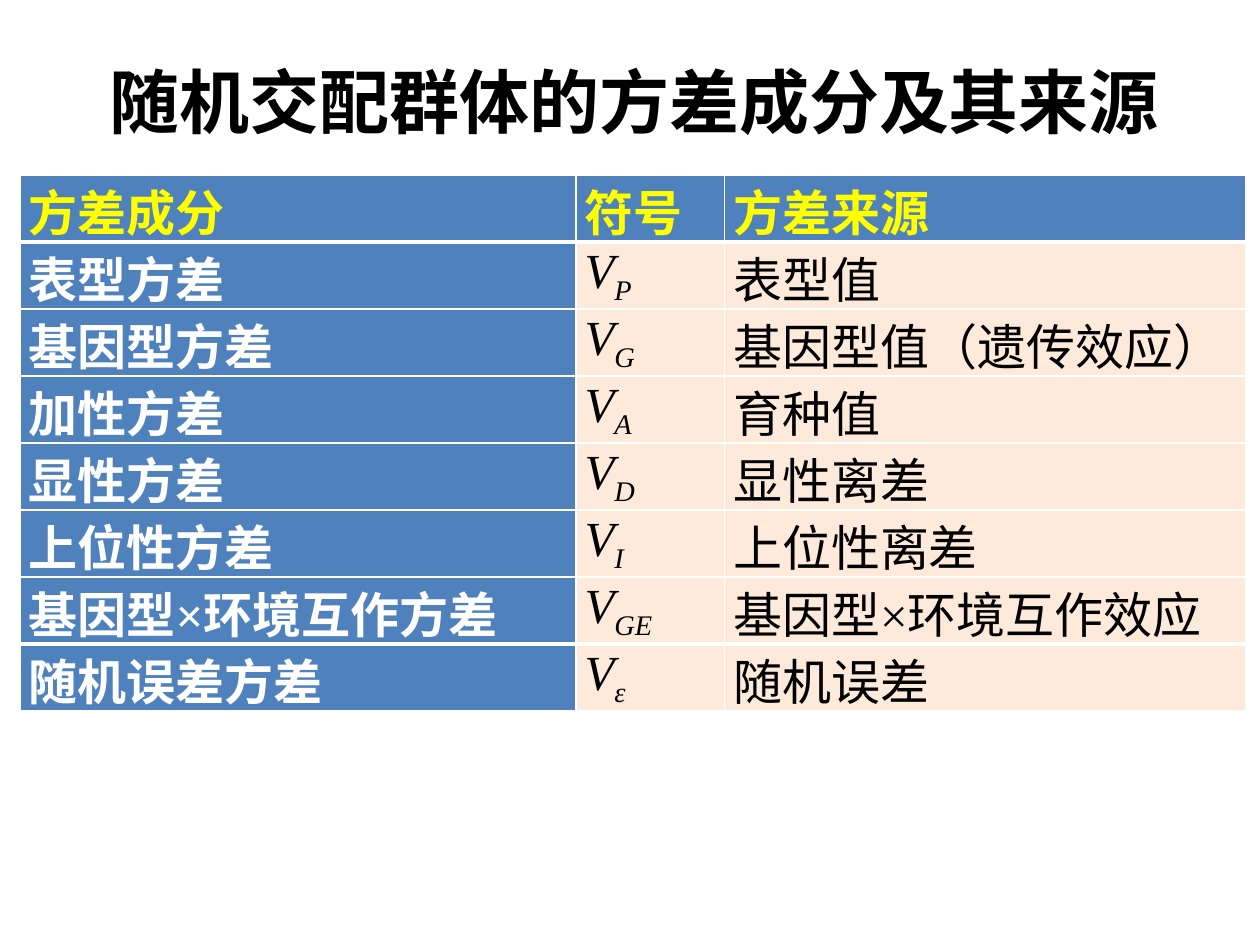
from dataclasses import dataclass

from lxml import etree
from pptx import Presentation
from pptx import util as u
from pptx.dml.color import RGBColor
from pptx.enum import text as t
from pptx.oxml import ns


@dataclass(frozen=True)
class Theme:
    font: str = "Times New Roman"
    title_size: int = 40
    table_size: int = 28
    black: str = "000000"
    white: str = "FFFFFF"
    yellow: str = "FFFF00"
    blue: str = "4F81BD"
    peach: str = "FDEADA"
    thin: int = 1
    thick: int = 3


THEME = Theme()

HEADER = ("方差成分", "符号", "方差来源")
# Component, subscript of its symbol V, source
COMPONENTS = [
    ("表型方差", "P", "表型值"),
    ("基因型方差", "G", "基因型值（遗传效应）"),
    ("加性方差", "A", "育种值"),
    ("显性方差", "D", "显性离差"),
    ("上位性方差", "I", "上位性离差"),
    ("基因型×环境互作方差", "GE", "基因型×环境互作效应"),
    ("随机误差方差", "ε", "随机误差"),
]
COLUMN_WIDTHS = (4.41, 1.18, 4.14)


def add_text(paragraph, text, *, size=THEME.table_size, color=THEME.black,
             bold=False, italic=False, baseline=0):
    run = paragraph.add_run()
    run.text = text
    font = run.font
    font.name = THEME.font
    font.size = u.Pt(size)
    font.bold = bold
    font.italic = italic
    font.color.rgb = RGBColor.from_string(color)
    if baseline:
        run._r.get_or_add_rPr().set("baseline", str(baseline * 1000))


def set_borders(cell, top, bottom):
    properties = cell._tc.get_or_add_tcPr()
    widths = {"lnL": THEME.thin, "lnR": THEME.thin, "lnT": top, "lnB": bottom}
    for position, (side, width) in enumerate(widths.items()):
        line = etree.Element(ns.qn(f"a:{side}"), w=str(u.Pt(width)))
        fill = etree.SubElement(line, ns.qn("a:solidFill"))
        etree.SubElement(fill, ns.qn("a:srgbClr"), val=THEME.white)
        properties.insert(position, line)


def format_cell(cell, fill):
    cell.fill.solid()
    cell.fill.fore_color.rgb = RGBColor.from_string(fill)
    cell.vertical_anchor = t.MSO_ANCHOR.MIDDLE
    cell.margin_left = cell.margin_right = u.Inches(0.07)
    cell.margin_top = cell.margin_bottom = 0
    paragraph = cell.text_frame.paragraphs[0]
    paragraph.alignment = t.PP_ALIGN.JUSTIFY
    return paragraph


def add_title(slide, left, top, width, height):
    box = slide.shapes.add_textbox(left, top, width, height)
    frame = box.text_frame
    frame.word_wrap = True
    frame.vertical_anchor = t.MSO_ANCHOR.MIDDLE
    paragraph = frame.paragraphs[0]
    paragraph.alignment = t.PP_ALIGN.CENTER
    add_text(paragraph, "随机交配群体的方差成分及其来源",
             size=THEME.title_size, bold=True)


def add_variance_table(slide, left, top, width, height):
    row_count = len(COMPONENTS) + 1
    table = slide.shapes.add_table(
        row_count, len(HEADER), left, top, width, height).table
    for column, column_width in zip(table.columns, COLUMN_WIDTHS):
        column.width = u.Inches(column_width)

    # Header row
    for column, label in enumerate(HEADER):
        paragraph = format_cell(table.cell(0, column), THEME.blue)
        add_text(paragraph, label, color=THEME.yellow, bold=True)

    # One row for each variance component
    for row, (name, subscript, source) in enumerate(COMPONENTS, start=1):
        add_text(format_cell(table.cell(row, 0), THEME.blue), name,
                 color=THEME.white, bold=True)
        symbol = format_cell(table.cell(row, 1), THEME.peach)
        add_text(symbol, "V", italic=True)
        add_text(symbol, subscript, italic=True, baseline=-25)
        add_text(format_cell(table.cell(row, 2), THEME.peach), source)

    # Thick rules below the header and above the last row
    thick_rules = (1, row_count - 1)
    for row in range(row_count):
        top_rule, bottom_rule = (
            THEME.thick if edge in thick_rules else THEME.thin
            for edge in (row, row + 1))
        for column in range(len(HEADER)):
            set_borders(table.cell(row, column), top_rule, bottom_rule)


def main():
    presentation = Presentation()
    presentation.slide_width = u.Inches(10)
    presentation.slide_height = u.Inches(7.5)
    slide = presentation.slides.add_slide(presentation.slide_layouts[6])
    add_title(slide, u.Inches(0.35), u.Inches(0.44),
              u.Inches(9.37), u.Inches(0.71))
    add_variance_table(slide, u.Inches(0.16), u.Inches(1.39),
                       u.Inches(sum(COLUMN_WIDTHS)), u.Inches(4.25))
    presentation.save("out.pptx")


if __name__ == "__main__":
    main()
